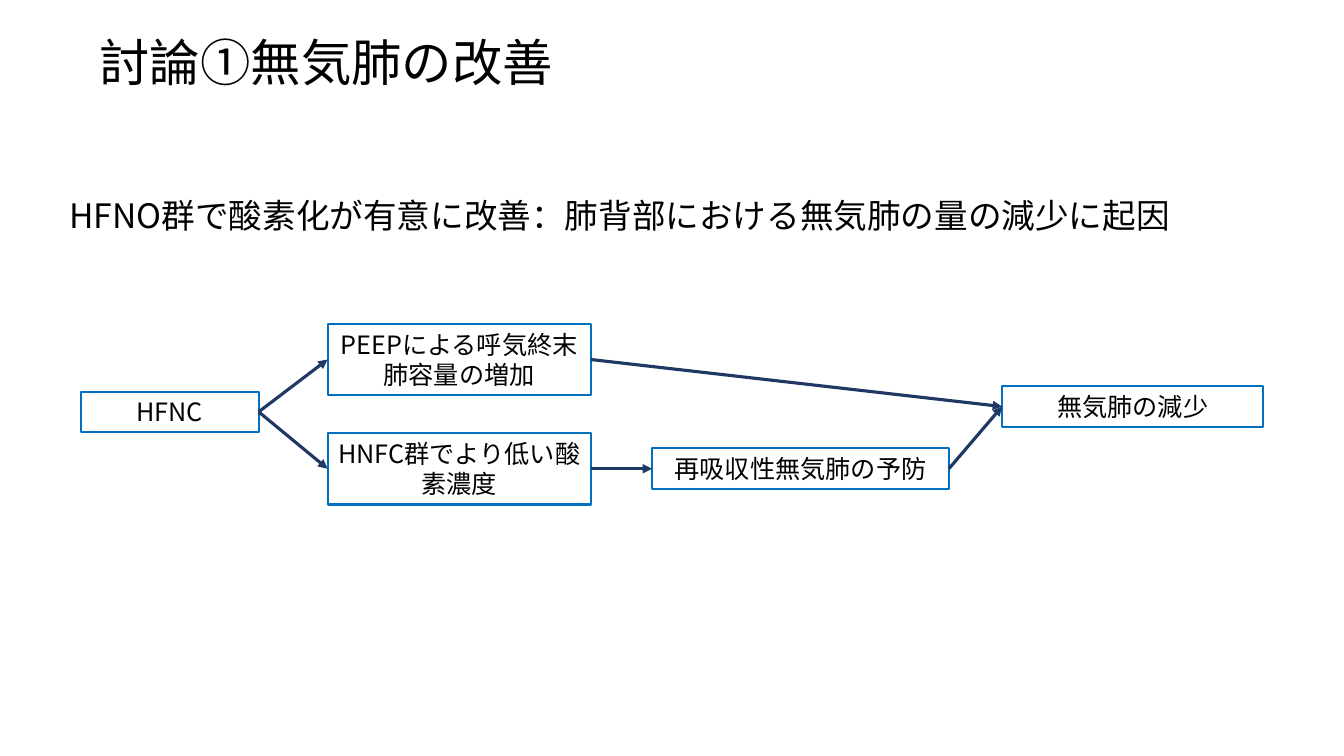
from lxml import etree
from pptx import Presentation
from pptx.dml.color import RGBColor
from pptx.enum.shapes import MSO_CONNECTOR, MSO_SHAPE
from pptx.enum.text import MSO_ANCHOR, PP_ALIGN
from pptx.oxml.ns import qn
from pptx.util import Pt

RECTANGLE = MSO_SHAPE.RECTANGLE
STRAIGHT = MSO_CONNECTOR.STRAIGHT
MIDDLE = MSO_ANCHOR.MIDDLE
LEFT = PP_ALIGN.LEFT
CENTER = PP_ALIGN.CENTER

FONT = "Noto Sans CJK JP"
BLACK = "000000"
BOX_BLUE = "0070C0"
ARROW_NAVY = "203864"
LEFT_SITE, RIGHT_SITE = 1, 3
ONE_LINE, TWO_LINES = 29, 51.1


def color(value):
    """Turn a hex string into a colour."""
    return RGBColor.from_string(value)


def write_text(shape, text, size=18, align=CENTER, line_spacing=1.0):
    """Put one formatted paragraph in a shape."""
    frame = shape.text_frame
    frame.word_wrap = True
    frame.vertical_anchor = MIDDLE
    paragraph = frame.paragraphs[0]
    paragraph.alignment = align
    paragraph.line_spacing = line_spacing
    run = paragraph.add_run()
    run.text = text
    run.font.size = Pt(size)
    run.font.name = FONT
    run.font.color.rgb = color(BLACK)
    east_asian = etree.SubElement(run.font._element, qn("a:ea"))
    east_asian.set("typeface", FONT)


def add_text(slide, text, left, top, width, height, **text_format):
    """Add a left-aligned text box."""
    shape = slide.shapes.add_textbox(Pt(left), Pt(top), Pt(width), Pt(height))
    write_text(shape, text, align=LEFT, **text_format)


def add_box(slide, text, left, center, width, height=ONE_LINE):
    """Add an outlined box centred on a height and return it."""
    shape = slide.shapes.add_shape(
        RECTANGLE, Pt(left), Pt(center - height / 2), Pt(width), Pt(height))
    shape.shadow.inherit = False
    shape.fill.background()
    shape.line.color.rgb = color(BOX_BLUE)
    shape.line.width = Pt(1.5)
    write_text(shape, text)
    return shape


def add_arrow(slide, source, target):
    """Join the right side of one box to the left side of another."""
    connector = slide.shapes.add_connector(STRAIGHT, 0, 0, 0, 0)
    connector.begin_connect(source, RIGHT_SITE)
    connector.end_connect(target, LEFT_SITE)
    connector.line.color.rgb = color(ARROW_NAVY)
    connector.line.width = Pt(2.25)
    etree.SubElement(connector.line._get_or_add_ln(), qn("a:tailEnd"), type="triangle")
    etree.SubElement(connector._element.spPr, qn("a:effectLst"))


def main():
    """Build the slide and save it."""
    presentation = Presentation()
    presentation.slide_width = Pt(960)
    presentation.slide_height = Pt(540)
    slide = presentation.slides.add_slide(presentation.slide_layouts[6])

    add_text(slide, "討論①無気肺の改善", 64, 29.5, 628, 34, size=36, line_spacing=0.9)
    add_text(slide, "HFNO群で酸素化が有意に改善：肺背部における無気肺の量の減少に起因",
             42.5, 135.4, 865, 36, size=24)

    therapy = add_box(slide, "HFNC", 57.8, 294.2, 127)
    volume = add_box(slide, "PEEPによる呼気終末肺容量の増加", 234, 256.8, 188, TWO_LINES)
    oxygen = add_box(slide, "HNFC群でより低い酸素濃度", 234, 334.8, 188, TWO_LINES)
    prevention = add_box(slide, "再吸収性無気肺の予防", 465.8, 334.8, 212)
    reduction = add_box(slide, "無気肺の減少", 715.8, 290.4, 186.5)

    for source, target in (
        (therapy, volume),
        (therapy, oxygen),
        (oxygen, prevention),
        (volume, reduction),
        (prevention, reduction),
    ):
        add_arrow(slide, source, target)

    presentation.save("out.pptx")


if __name__ == "__main__":
    main()
